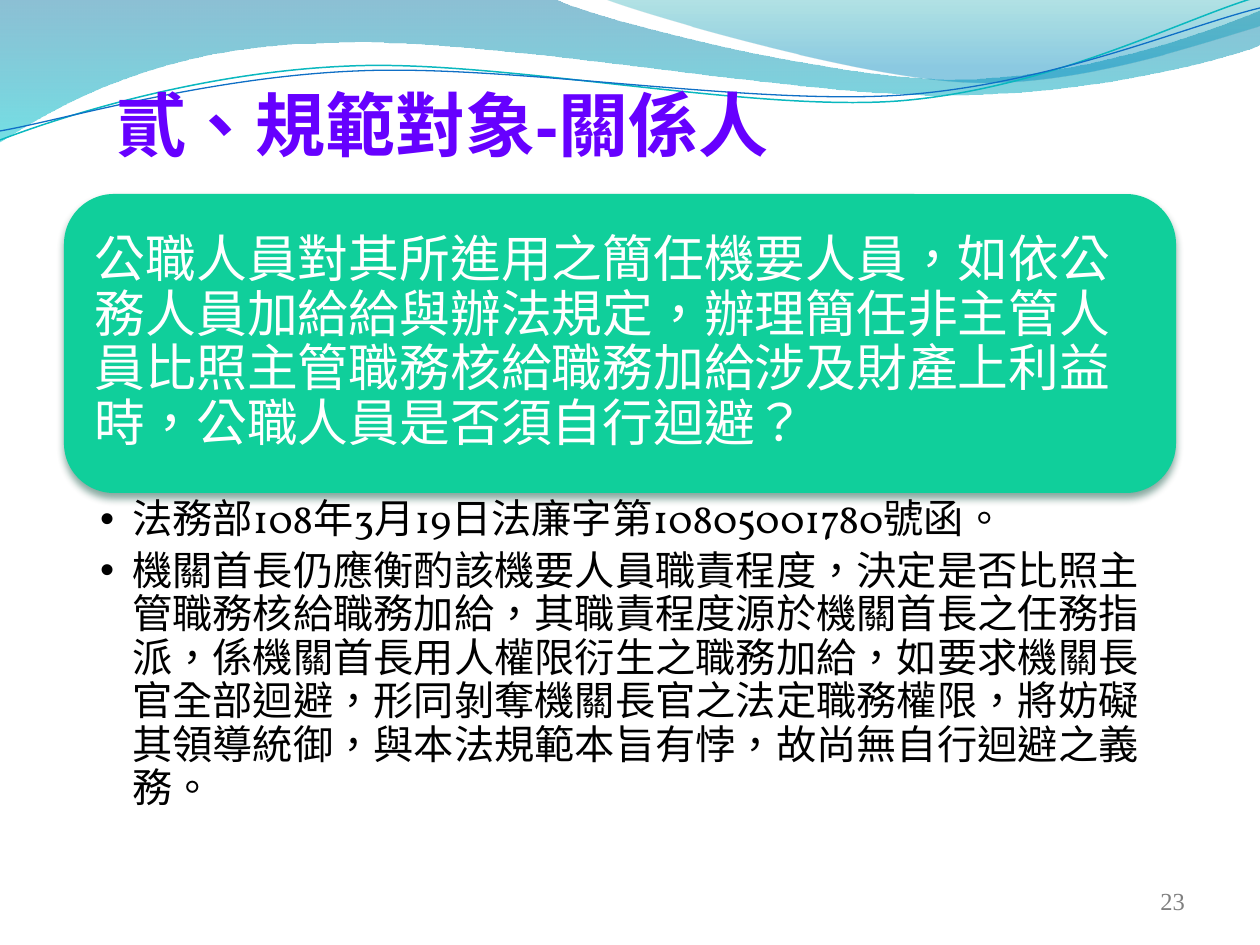
from lxml import etree
from pptx import Presentation
from pptx.dml.color import RGBColor
from pptx.enum.lang import MSO_LANGUAGE_ID
from pptx.enum.shapes import MSO_SHAPE
from pptx.enum.text import MSO_ANCHOR, PP_ALIGN
from pptx.oxml.ns import qn
from pptx.util import Emu, Pt

ROUND = MSO_SHAPE.ROUNDED_RECTANGLE
TOP, MID = MSO_ANCHOR.TOP, MSO_ANCHOR.MIDDLE
LEFT, RIGHT = PP_ALIGN.LEFT, PP_ALIGN.RIGHT
CHINESE = MSO_LANGUAGE_ID.TRADITIONAL_CHINESE

SCALE = 914400 / 126

NAVY = RGBColor(0x00, 0x74, 0xA1)
CYAN = RGBColor(0x00, 0xC6, 0xCF)
TEAL = RGBColor(0x00, 0xA1, 0xA9)
BLUE = RGBColor(0x00, 0x8B, 0xBF)
AQUA = RGBColor(0x0A, 0xB8, 0xBF)
ROYAL = RGBColor(0x0F, 0x6F, 0xC6)
VIOLET = RGBColor(0x66, 0x00, 0xFF)
GREEN = RGBColor(0x10, 0xCF, 0x9B)
SHADE = RGBColor(0x04, 0x4A, 0x37)
GREY = RGBColor(0x7F, 0x7F, 0x7F)
WHITE = RGBColor(0xFF, 0xFF, 0xFF)
BLACK = RGBColor(0x00, 0x00, 0x00)

TITLE = "貳、規範對象-關係人"
ASK = ("公職人員對其所進用之簡任機要人員，如依公務人員加給給與辦法規定，"
       "辦理簡任非主管人員比照主管職務核給職務加給涉及財產上利益時，"
       "公職人員是否須自行迴避？")
REPLY = [
    "法務部108年3月19日法廉字第10805001780號函。",
    "機關首長仍應衡酌該機要人員職責程度，決定是否比照主管職務核給職務加給，"
    "其職責程度源於機關首長之任務指派，係機關首長用人權限衍生之職務加給，"
    "如要求機關長官全部迴避，形同剝奪機關長官之法定職務權限，"
    "將妨礙其領導統御，與本法規範本旨有悖，故尚無自行迴避之義務。",
]

BAND = [(0, 0), (554, -1), (600, 21, 837, 79, 955, 79),
        (1074, 79, 1207, 33, 1260, 11), (1261, 45),
        (1239, 55, 1096, 96, 940, 95), (784, 95, 481, 35, 324, 43),
        (163, 45, 58, 105, -1, 142)]
CREST = [(604, -1), (641, 14, 859, 78, 969, 82),
         (1079, 87, 1211, 40, 1260, 26), (1260, 0)]
UPPER = [(0, 140), (60, 117, 199, 72, 349, 66),
         (498, 59, 747, 112, 898, 101), (1050, 89, 1182, 19, 1257, -3)]
LOWER = [(0, 131), (59, 121, 207, 77, 357, 71),
         (508, 64, 752, 106, 903, 95), (1053, 84, 1186, 26, 1260, 8)]


def px(num):
    """Turn pixels into EMU."""
    return Emu(round(num * SCALE))


def fade(color, value):
    """Add an opacity in percent to a colour element."""
    etree.SubElement(color, qn("a:alpha"), val=str(value * 1000))


def bend(shape, path):
    """Turn the straight segments with six numbers into cubic curves."""
    left = min(seg[-2] for seg in path)
    top = min(seg[-1] for seg in path)
    lines = list(shape._element.iter(qn("a:lnTo")))
    for line, seg in zip(lines, path[1:]):
        if len(seg) == 6:
            cubic = etree.Element(qn("a:cubicBezTo"))
            for x, y in zip(seg[::2], seg[1::2]):
                etree.SubElement(cubic, qn("a:pt"), x=str(x - left),
                                 y=str(y - top))
            line.getparent().replace(line, cubic)


def write(frame, lines, font="Vollkorn", size=23, color=BLACK, bold=False,
          align=LEFT, anchor=TOP, inset=(13, 6, 13, 6), lead=1.0, after=0,
          hang=0):
    """Fill a text frame with formatted paragraphs."""
    frame.word_wrap = True
    frame.vertical_anchor = anchor
    (frame.margin_left, frame.margin_top,
     frame.margin_right, frame.margin_bottom) = map(px, inset)
    for rank, line in enumerate(lines):
        para = frame.paragraphs[0] if rank == 0 else frame.add_paragraph()
        para.alignment, para.line_spacing = align, lead
        para.space_after = Pt(after)
        run = para.add_run()
        run.text = line
        style = run.font
        style.name, style.size, style.bold = font, Pt(size), bold
        style.color.rgb, style.language_id = color, CHINESE
        if hang:
            props = para._p.get_or_add_pPr()
            props.set("marL", str(px(hang)))
            props.set("indent", str(-px(hang)))
            etree.SubElement(props, qn("a:buFont"), typeface="Arial")
            etree.SubElement(props, qn("a:buChar"), char="•")


class Deck:
    """Holds the style and the current slide."""

    def __init__(self, wide, high):
        """Start a deck with one blank slide."""
        self.file = Presentation()
        self.file.slide_width, self.file.slide_height = px(wide), px(high)
        self.shapes = self.file.slides.add_slide(
            self.file.slide_layouts[6]).shapes

    def curve(self, path, close):
        """Draw a freeform along a path."""
        pen = self.shapes.build_freeform(*path[0], scale=SCALE)
        pen.add_line_segments([seg[-2:] for seg in path[1:]], close=close)
        shape = pen.convert_to_shape()
        bend(shape, path)
        shape.shadow.inherit = False
        return shape

    def wave(self, path, *stops):
        """Draw a wave with a clear gradient from top to bottom."""
        shape = self.curve(path, True)
        shape.line.fill.background()
        shape.fill.gradient()
        shape.fill.gradient_angle = 270
        for stop, (spot, color, alpha) in zip(shape.fill.gradient_stops, stops):
            stop.position, stop.color.rgb = spot, color
            fade(stop._gs[0], alpha)

    def strand(self, path, color, width):
        """Draw a thin open curve."""
        shape = self.curve(path, False)
        shape.fill.background()
        shape.line.color.rgb, shape.line.width = color, Pt(width)

    def card(self, *area):
        """Draw the green rounded card with its soft shadow."""
        shape = self.shapes.add_shape(ROUND, *map(px, area))
        shape.fill.solid()
        shape.fill.fore_color.rgb = GREEN
        shape.line.fill.background()
        shape.shadow.inherit = False
        glow = etree.SubElement(
            shape._element.spPr.find(qn("a:effectLst")), qn("a:outerShdw"),
            blurRad=str(Pt(4.5)), dist=str(Pt(3)), dir="5400000",
            rotWithShape="0")
        fade(etree.SubElement(glow, qn("a:srgbClr"), val=str(SHADE)), 48)

    def text(self, area, *lines, **form):
        """Place a text box."""
        write(self.shapes.add_textbox(*map(px, area)).text_frame, lines, **form)


def main():
    """Build the slide and save it."""
    deck = Deck(1260, 945)
    deck.wave(BAND, (0, NAVY, 45), (1, CYAN, 55))
    deck.wave(CREST, (0, TEAL, 30), (0.8, BLUE, 45))
    deck.strand(UPPER, AQUA, 0.85)
    deck.strand(LOWER, ROYAL, 0.75)
    deck.text((104, 76, 903, 97), TITLE, font="Arial", size=40, color=VIOLET,
              bold=True, inset=(12, 6, 12, 6))
    deck.text((904, 876, 294, 50), "23", font="Times New Roman", size=14,
              color=GREY, align=RIGHT, anchor=MID)
    deck.card(64, 194, 1112, 299)
    deck.text((80, 208, 1082, 270), ASK, size=29, color=WHITE, anchor=MID,
              inset=(15, 15, 15, 15), lead=0.9)
    deck.text((64, 494, 1112, 415), *REPLY, inset=(36, 5, 29, 5), lead=0.9,
              after=4.6, hang=32)
    deck.file.save("out.pptx")


if __name__ == "__main__":
    main()
